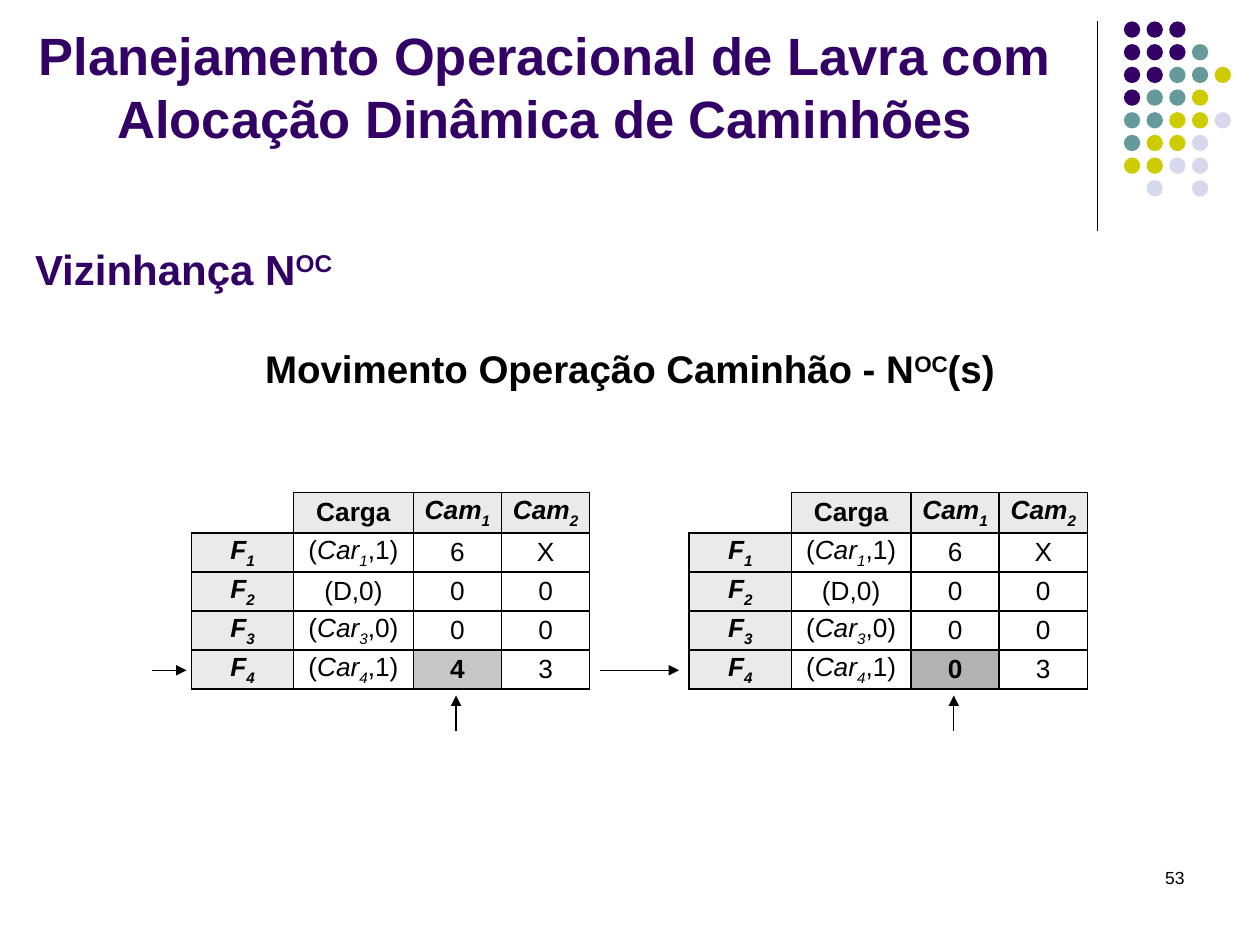
from pptx import Presentation
from pptx.dml.color import RGBColor
from pptx.enum.shapes import MSO_CONNECTOR, MSO_SHAPE
from pptx.enum.text import MSO_ANCHOR as Anchor, MSO_AUTO_SIZE as AutoSize, PP_ALIGN as Align
from pptx.oxml.ns import qn
from pptx.util import Inches, Pt
from lxml.etree import SubElement

BLACK = RGBColor(0x00, 0x00, 0x00)
PURPLE = RGBColor(0x33, 0x00, 0x66)
TEAL = RGBColor(0x66, 0x99, 0x99)
OLIVE = RGBColor(0xCC, 0xCC, 0x00)
LAVENDER = RGBColor(0xD8, 0xD8, 0xEC)
HEADER_GRAY = RGBColor(0xEA, 0xEA, 0xEA)
BEFORE_GRAY = RGBColor(0xC7, 0xC7, 0xC7)
AFTER_GRAY = RGBColor(0xB2, 0xB2, 0xB2)

DOT_COLORS = {"P": PURPLE, "T": TEAL, "O": OLIVE, "L": LAVENDER}
DOT_ROWS = ["PPP", "PPPT", "PPTTO", "PTTO", "TTOOL", "TOOL", "OOLL", " L L"]
COLUMN_WIDTHS = [0.81, 0.95, 0.7, 0.7]
ROW_HEIGHTS = [0.32] + [0.31] * 4
LOADS = [("Car", "1"), ("D", "0"), ("Car", "0"), ("Car", "1")]


class SlideBuilder:
    """Holds the font and the current slide and adds each kind of element."""

    def __init__(self, slide, font_name="Arial"):
        self.slide = slide
        self.font_name = font_name

    def fill_text(self, frame, runs, align=Align.LEFT, space_before=0, **base):
        paragraph = frame.paragraphs[0]
        paragraph.alignment = align
        paragraph.space_before = Pt(space_before)
        for words, changes in runs:
            style = {"name": self.font_name, "italic": False, **base, **changes}
            run = paragraph.add_run()
            run.text = words
            run.font.color.rgb = style.pop("color", BLACK)
            baseline = style.pop("baseline", 0)
            if baseline:
                run._r.get_or_add_rPr().set("baseline", str(baseline * 1000))
            for key, value in style.items():
                setattr(run.font, key, value)

    def title(self, words, box, **style):
        heading = self.slide.shapes.title
        for key, value in zip(("left", "top", "width", "height"), box):
            setattr(heading, key, Inches(value))
        frame = heading.text_frame
        frame.auto_size = AutoSize.NONE
        frame.vertical_anchor = Anchor.MIDDLE
        self.fill_text(frame, [(words, {})], Align.CENTER, **style)

    def text(self, runs, box, align=Align.LEFT, **style):
        frame = self.slide.shapes.add_textbox(*map(Inches, box)).text_frame
        frame.word_wrap = True
        self.fill_text(frame, runs, align, **style)

    def dot(self, left, top, color, size=0.13):
        dot = self.slide.shapes.add_shape(
            MSO_SHAPE.OVAL, Inches(left), Inches(top), Inches(size), Inches(size))
        dot.shadow.inherit = False
        dot.fill.solid()
        dot.fill.fore_color.rgb = color
        dot.line.fill.background()

    def line(self, start, end, arrow=False):
        line = self.slide.shapes.add_connector(
            MSO_CONNECTOR.STRAIGHT, *map(Inches, (*start, *end)))
        line.line.color.rgb = BLACK
        line.line.width = Pt(0.75)
        properties = line._element.spPr
        if arrow:
            SubElement(properties.find(qn("a:ln")), qn("a:tailEnd"), type="triangle")
        SubElement(properties, qn("a:effectLst"))

    def border(self, cell, sides):
        properties = cell._tc.get_or_add_tcPr()
        for side in "LRTB":
            edge = SubElement(properties, qn(f"a:ln{side}"), w=str(Pt(1)))
            if side in sides:
                fill = SubElement(edge, qn("a:solidFill"))
                SubElement(fill, qn("a:srgbClr"), val=str(BLACK))
            else:
                SubElement(edge, qn("a:noFill"))

    def table(self, rows, left, top, highlight):
        table = self.slide.shapes.add_table(
            len(rows), len(COLUMN_WIDTHS), Inches(left), Inches(top),
            Inches(sum(COLUMN_WIDTHS)), Inches(sum(ROW_HEIGHTS))).table
        table.first_row = table.horz_banding = False
        for column, width in zip(table.columns, COLUMN_WIDTHS):
            column.width = Inches(width)
        for row, height in zip(table.rows, ROW_HEIGHTS):
            row.height = Inches(height)
        fills = {(len(rows) - 1, 2): highlight}
        for r, row in enumerate(rows):
            for c, runs in enumerate(row):
                cell = table.cell(r, c)
                for side in ("left", "right", "top", "bottom"):
                    setattr(cell, f"margin_{side}", 0)
                cell.vertical_anchor = Anchor.MIDDLE
                self.border(cell, "LRTB" if runs else "RB")
                header = r == 0 or c == 0
                color = fills.get((r, c), HEADER_GRAY if header and runs else None)
                if color is None:
                    cell.fill.background()
                else:
                    cell.fill.solid()
                    cell.fill.fore_color.rgb = color
                self.fill_text(cell.text_frame, runs, Align.CENTER, space_before=3,
                               size=Pt(15), bold=header or (r, c) in fills)


def indexed(name, index):
    """Return runs for an italic name with a subscript index."""
    return [(name, {"italic": True}), (str(index), {"italic": True, "baseline": -25})]


def load_pair(name, state, index):
    """Return runs for a load pair, indexed unless it is the empty load."""
    if name == "D":
        return [(f"(D,{state})", {})]
    return [("(", {}), *indexed(name, index), (f",{state})", {})]


def solution(trips):
    """Return the table rows of a solution from its trips per truck."""
    rows = [[[], [("Carga", {})], indexed("Cam", 1), indexed("Cam", 2)]]
    for index, (pair, counts) in enumerate(zip(LOADS, trips), 1):
        rows.append([indexed("F", index), load_pair(*pair, index),
                     *([(count, {})] for count in counts)])
    return rows


def main():
    """Build the slide and save the deck."""
    deck = Presentation()
    deck.slide_width, deck.slide_height = Inches(10), Inches(7.5)
    builder = SlideBuilder(deck.slides.add_slide(deck.slide_layouts[5]))

    builder.line((8.71, 0.17), (8.71, 1.83))
    for r, pattern in enumerate(DOT_ROWS):
        for c, code in enumerate(pattern):
            if code in DOT_COLORS:
                builder.dot(8.92 + 0.18 * c, 0.17 + 0.18 * r, DOT_COLORS[code])

    superscript = ("OC", {"baseline": 30})
    builder.title("Planejamento Operacional de Lavra com Alocação Dinâmica de Caminhões",
                  (0.2, 0.13, 8.25, 1.1), size=Pt(30), bold=True, color=PURPLE)
    builder.text([("Vizinhança N", {}), superscript], (0.18, 1.88, 8.43, 0.61),
                 size=Pt(24), bold=True, color=PURPLE)
    builder.text([("Movimento Operação Caminhão - N", {}), superscript, ("(s)", {})],
                 (0, 2.69, 10, 0.58), Align.CENTER, space_before=4.4,
                 size=Pt(22), bold=True)
    builder.text([("53", {})], (7.17, 6.83, 2.33, 0.5), Align.RIGHT, size=Pt(10))

    shared_trips = ["6X", "00", "00"]
    for left, last_trips, gray in ((1.52, "43", BEFORE_GRAY), (5.47, "03", AFTER_GRAY)):
        builder.table(solution([*shared_trips, last_trips]), left, 3.91, gray)
        truck_x = left + 2.1
        builder.line((truck_x, 5.8), (truck_x, 5.52), arrow=True)
    for start_x, end_x in ((1.21, 1.48), (4.76, 5.39)):
        builder.line((start_x, 5.32), (end_x, 5.32), arrow=True)

    deck.save("out.pptx")


if __name__ == "__main__":
    main()
